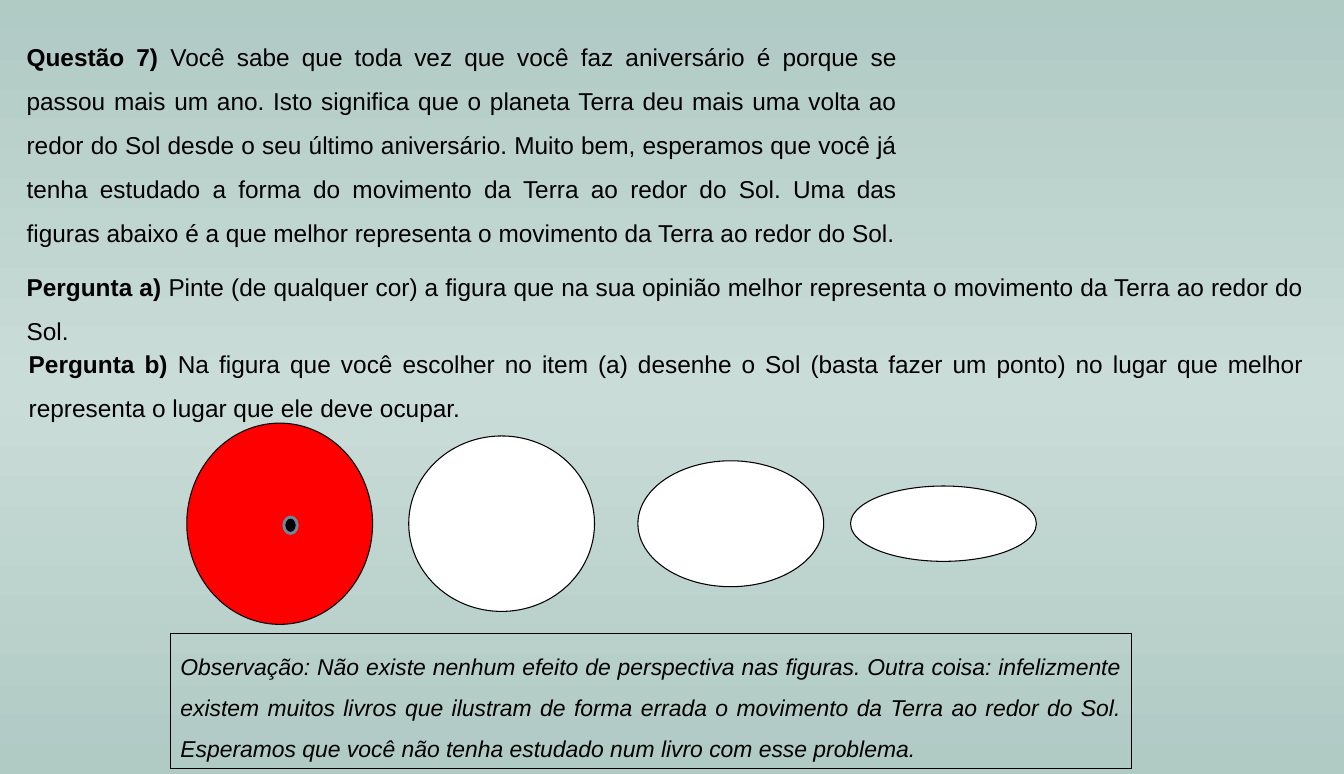
import copy

import pptx
import pptx.dml.color
import pptx.enum.shapes
import pptx.enum.text
import pptx.oxml.ns
import pptx.util

Inches = pptx.util.Inches
Pt = pptx.util.Pt
Shapes = pptx.enum.shapes.MSO_SHAPE

COLORS = {
    "edge": "B0CAC4",
    "middle": "CADCD8",
    "ink": "000000",
    "orbit": "FFFFFF",
    "chosen": "FF0000",
    "sun_rim": "6D879B",
}

QUESTIONS = [
    ((0.16, 0.22, 8.63, 2.19), "Questão 7)",
     " Você sabe que toda vez que você faz aniversário é porque se passou mais um ano. "
     "Isto significa que o planeta Terra deu mais uma volta ao redor do Sol desde o seu "
     "último aniversário. Muito bem, esperamos que você já tenha estudado a forma do "
     "movimento da Terra ao redor do Sol. Uma das figuras abaixo é a que melhor "
     "representa o movimento da Terra ao redor do Sol."),
    ((0.16, 2.45, 12.57, 0.96), "Pergunta a)",
     " Pinte (de qualquer cor) a figura que na sua opinião melhor representa o "
     "movimento da Terra ao redor do Sol."),
    ((0.18, 3.19, 12.55, 0.96), "Pergunta b)",
     " Na figura que você escolher no item (a) desenhe o Sol (basta fazer um ponto) no "
     "lugar que melhor representa o lugar que ele deve ocupar."),
]

NOTE = (
    "Observação: Não existe nenhum efeito de perspectiva nas figuras. Outra coisa: "
    "infelizmente existem muitos livros que ilustram de forma errada o movimento da "
    "Terra ao redor do Sol. Esperamos que você não tenha estudado num livro com esse "
    "problema."
)

ORBITS = [
    (0, 1.95, "chosen"),
    (2.15, 1.7, "orbit"),
    (4.37, 1.22, "orbit"),
    (6.43, 0.73, "orbit"),
]


def color(name):
    return pptx.dml.color.RGBColor.from_string(COLORS[name])


def paint_background(page):
    fill = page.background.fill
    fill.gradient()
    fill.gradient_angle = 90
    stop_list = next(page._element.iter(pptx.oxml.ns.qn("a:gsLst")))
    stop_list.insert(1, copy.deepcopy(stop_list[0]))
    stops = zip(fill.gradient_stops, (0, 0.5, 1), ("edge", "middle", "edge"))
    for stop, position, name in stops:
        stop.position = position
        stop.color.rgb = color(name)


def add_text(page, box, spans, size):
    shape = page.shapes.add_textbox(*map(Inches, box))
    shape.text_frame.word_wrap = True
    para = shape.text_frame.paragraphs[0]
    para.alignment = pptx.enum.text.PP_ALIGN.JUSTIFY
    para.line_spacing = 1.5
    for text, bold, italic in spans:
        span = para.add_run()
        span.text = text
        span.font.name = "Arial"
        span.font.size = Pt(size)
        span.font.bold = bold
        span.font.italic = italic
        span.font.color.rgb = color("ink")
    return shape


def add_question(page, box, label, body):
    add_text(page, box, [(label, True, False), (body, False, False)], 17)


def add_ellipse(page, box, fill, line, width):
    shape = page.shapes.add_shape(Shapes.OVAL, *map(Inches, box))
    shape.shadow.inherit = False
    shape.fill.solid()
    shape.fill.fore_color.rgb = color(fill)
    shape.line.color.rgb = color(line)
    shape.line.width = Pt(width)


def add_orbits(page, box):
    left, top, width, height = box
    for offset, orbit_height, fill in ORBITS:
        orbit_top = top + (height - orbit_height) / 2
        add_ellipse(page, (left + offset, orbit_top, 1.8, orbit_height), fill, "ink", 0.75)
    add_ellipse(page, (left + 0.94, top + 0.91, 0.13, 0.16), "ink", "sun_rim", 2)


def add_note(page, box):
    shape = add_text(page, box, [(NOTE, False, True)], 16)
    shape.line.color.rgb = color("ink")
    shape.line.width = Pt(0.75)


def main():
    deck = pptx.Presentation()
    deck.slide_width = Inches(13.02)
    deck.slide_height = Inches(7.5)
    page = deck.slides.add_slide(deck.slide_layouts[6])
    paint_background(page)
    for box, label, body in QUESTIONS:
        add_question(page, box, label, body)
    add_orbits(page, (1.81, 4.1, 8.23, 1.95))
    add_note(page, (1.65, 6.14, 9.31, 1.31))
    deck.save("out.pptx")


if __name__ == "__main__":
    main()
